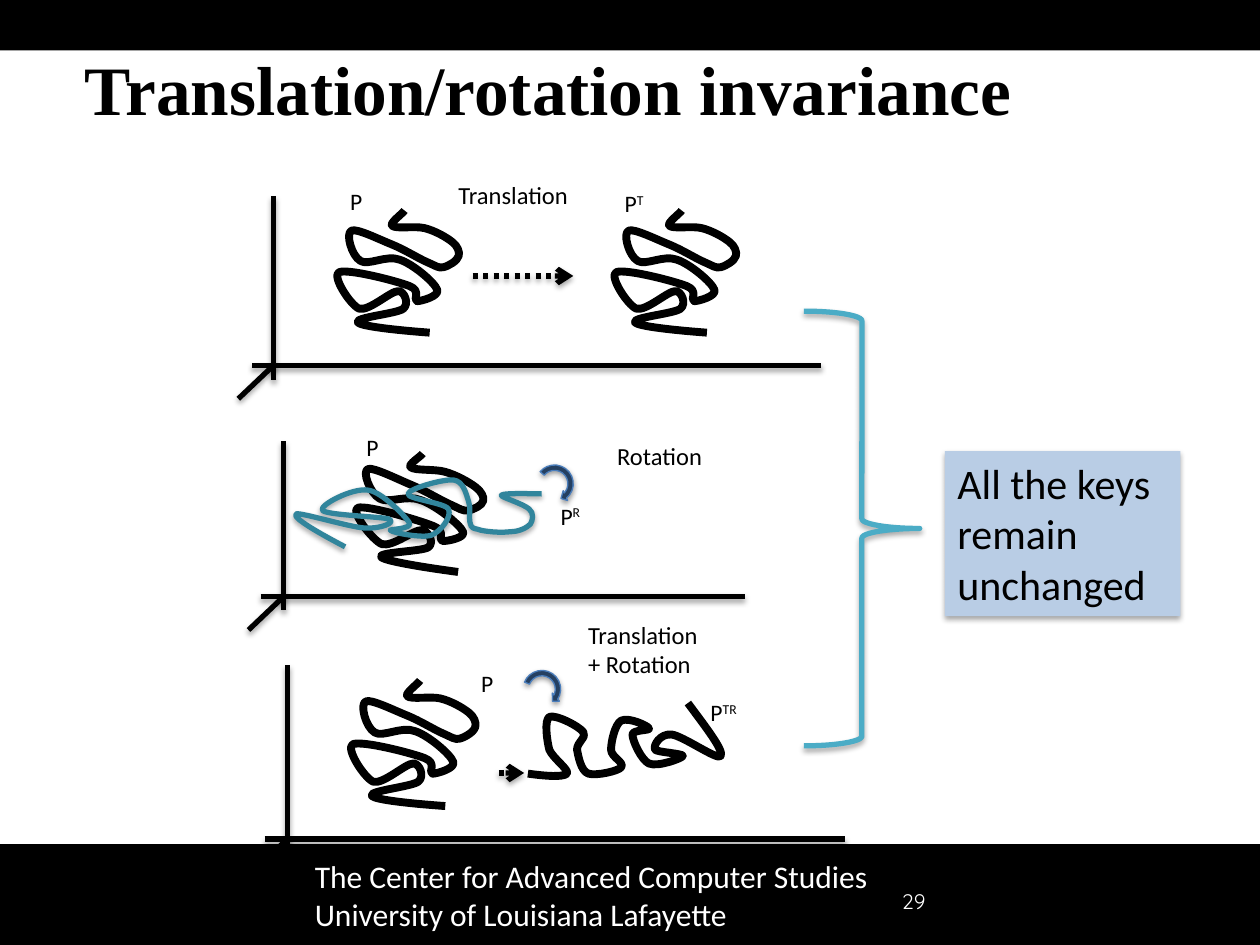
import math

from pptx import Presentation
from pptx.dml.color import RGBColor
from pptx.enum.dml import MSO_LINE
from pptx.enum.shapes import MSO_CONNECTOR, MSO_SHAPE
from pptx.enum.text import MSO_ANCHOR, PP_ALIGN
from pptx.oxml import parse_xml
from pptx.oxml.ns import nsdecls, qn
from pptx.util import Pt

STRAIGHT = MSO_CONNECTOR.STRAIGHT
RECT, BRACE, TURN = MSO_SHAPE.RECTANGLE, MSO_SHAPE.RIGHT_BRACE, MSO_SHAPE.CIRCULAR_ARROW
DOTTED = MSO_LINE.ROUND_DOT
MIDDLE, LEFT = MSO_ANCHOR.MIDDLE, PP_ALIGN.LEFT

BLACK = RGBColor(0x00, 0x00, 0x00)
WHITE = RGBColor(0xFF, 0xFF, 0xFF)
AQUA = RGBColor(0x4B, 0xAC, 0xC6)
TEAL = RGBColor(0x31, 0x85, 0x9C)
NAVY = RGBColor(0x25, 0x40, 0x61)
BLUE = RGBColor(0x4B, 0x7E, 0xBC)
PALE_BLUE = RGBColor(0xB9, 0xCD, 0xE5)

# Each chain: rotation, frame size, start point, then two controls and an end per curve.
PROTEIN = (207, 95, 97, [
    77, 96, 50, 94, 23, 91, 20, 88, 16, 84, 51, 81, 56, 77, 61, 73, 57, 63, 52, 63,
    46, 63, 29, 79, 21, 77, 14, 74, -1, 51, 5, 48, 12, 45, 51, 55, 61, 59,
    71, 63, 63, 70, 67, 71, 70, 71, 85, 67, 83, 62, 81, 56, 63, 41, 53, 38,
    43, 34, 28, 43, 22, 39, 15, 35, 10, 17, 15, 15, 19, 13, 37, 22, 47, 26,
    57, 30, 68, 37, 75, 40, 82, 43, 84, 45, 88, 44, 92, 43, 99, 39, 100, 35,
    101, 32, 99, 27, 95, 24, 90, 20, 81, 15, 73, 13, 65, 11, 50, 14, 47, 11,
    45, 9, 56, 1, 57, -1])
ROTATED = (266.3, 49, 198, [
    -33, 127, -54, 116, -75, 104, -72, 101, -70, 99, -31, 111, -18, 112,
    -6, 113, 8, 108, 2, 105, -3, 103, -48, 102, -51, 98, -54, 94, -27, 80, -15, 82,
    -4, 83, 15, 103, 18, 108, 21, 113, 0, 113, 3, 114, 6, 116, 27, 120, 35, 118,
    43, 115, 52, 103, 49, 97, 46, 92, 16, 89, 17, 85, 17, 81, 45, 73, 53, 74,
    61, 75, 63, 85, 65, 91, 67, 96, 65, 103, 66, 107, 67, 110, 66, 112, 72, 113,
    77, 115, 91, 116, 98, 115, 105, 115, 111, 112, 114, 109,
    116, 106, 117, 100, 113, 97, 109, 93, 89, 87, 91, 86, 93, 84, 118, 85, 123, 85])
MOVED_ROTATED = (90, 59, 156, [
    79, 48, 93, 67, 108, 86, 105, 90, 103, 94, 75, 74, 66, 73, 57, 72, 51, 82, 53, 85,
    54, 87, 75, 88, 75, 90, 74, 92, 55, 99, 48, 96, 42, 93, 35, 78, 35, 73,
    35, 69, 50, 70, 48, 68, 47, 66, 32, 59, 26, 62, 21, 65, 18, 79, 18, 85,
    18, 91, 29, 95, 26, 99, 24, 102, 6, 106, 0, 104, -6, 102, -8, 90, -9, 85,
    -9, 79, -1, 75, -4, 71, -8, 66, -26, 57, -31, 59, -35, 62, -33, 77, -31, 85,
    -28, 92, -15, 101, -17, 104, -20, 107, -34, 106, -48, 104])


def add_shadow(sp, alpha=35, dist=1.8):
    sp._element.spPr.append(parse_xml(
        f'<a:effectLst {nsdecls("a")}><a:outerShdw blurRad="{Pt(3.1)}" dist="{Pt(dist)}" '
        f'dir="5400000" rotWithShape="0"><a:srgbClr val="000000"><a:alpha val="{alpha}000"/>'
        '</a:srgbClr></a:outerShdw></a:effectLst>'))


def add_text(slide, box, text, size, color=BLACK, font="Calibri", sup=""):
    """Add a text box; sup is set as a superscript after the text."""
    sp = slide.shapes.add_textbox(*map(Pt, box))
    tf = sp.text_frame
    tf.word_wrap = True
    tf.text = text
    for p in tf.paragraphs:
        p.font.name, p.font.size, p.font.color.rgb = font, Pt(size), color
    if sup:
        r = tf.paragraphs[0].add_run()
        r.text = sup
        r._r.get_or_add_rPr().set("baseline", "30000")
    return sp


def add_line(slide, x1, y1, x2, y2, arrow=False):
    line = slide.shapes.add_connector(STRAIGHT, Pt(x1), Pt(y1), Pt(x2), Pt(y2))
    line.line.color.rgb, line.line.width = BLACK, Pt(3)
    if arrow:
        line.line.dash_style = DOTTED
        ln = line._element.spPr.find(qn("a:ln"))
        ln.append(ln.makeelement(qn("a:tailEnd"), {"type": "arrow"}))
    add_shadow(line)


def add_axes(slide, x, top, bottom, left, right, y):
    """Three axes that cross at (x, y)."""
    add_line(slide, x, top, x, bottom)
    add_line(slide, left, y, right, y)
    add_line(slide, x, y, x - 20, y + 19)


def add_chain(slide, chain, box, color=BLACK, width=4.5, shadow=False):
    """Fit a chain to the unrotated frame in box, then rotate it."""
    angle, w, h, numbers = chain
    x, y, box_w, box_h = box
    rot = complex(math.cos(math.radians(angle)), math.sin(math.radians(angle)))
    nodes = []
    for px, py in zip(numbers[::2], numbers[1::2]):
        z = complex(px - w / 2, py - h / 2) / rot
        nodes.append(complex(z.real * box_w / w, z.imag * box_h / h))
    xs, ys = [z.real for z in nodes[::3]], [z.imag for z in nodes[::3]]
    mid = complex(min(xs) + max(xs), min(ys) + max(ys)) / 2
    # The shape turns about the middle of its outline, so allow for that shift.
    origin = complex(x + box_w / 2, y + box_h / 2) + mid * rot - mid
    placed = [(Pt((z + origin).real), Pt((z + origin).imag)) for z in nodes]
    builder = slide.shapes.build_freeform(*placed[0])
    builder.add_line_segments(placed[3::3], close=False)
    sp = builder.convert_to_shape()
    # Turn each segment into a curve by adding its two control points.
    for i, segment in enumerate(list(sp._element.iter(qn("a:lnTo")))):
        segment.tag = qn("a:cubicBezTo")
        for j, (cx, cy) in enumerate(placed[3 * i + 1:3 * i + 3]):
            segment.insert(j, segment.makeelement(
                qn("a:pt"), {"x": str(cx - sp.left), "y": str(cy - sp.top)}))
    sp.rotation = angle
    sp.fill.background()
    sp.line.color.rgb, sp.line.width = color, Pt(width)
    if shadow:
        add_shadow(sp)
    else:
        sp.shadow.inherit = False


def add_turn_arrow(slide, x, y, angle):
    sp = slide.shapes.add_shape(TURN, Pt(x), Pt(y), Pt(24.5), Pt(24.5))
    for i, value in enumerate((0.125, 11.423, 204.577, 92.106, 0.125)):
        sp.adjustments[i] = value
    sp.rotation = angle
    sp.fill.solid()
    sp.fill.fore_color.rgb = NAVY
    sp.line.color.rgb, sp.line.width = BLUE, Pt(0.75)
    add_shadow(sp, 38, 1.6)


def add_frame(slide):
    """Black bars, title and footer."""
    for y, h in ((0, 28.8), (482.4, 57.6)):
        bar = slide.shapes.add_shape(RECT, 0, Pt(y), Pt(720), Pt(h))
        bar.shadow.inherit = False
        bar.fill.solid()
        bar.fill.fore_color.rgb = BLACK
        bar.line.fill.background()
    title = slide.shapes.title
    title.left, title.top, title.width, title.height = map(Pt, (41, 21.6, 620.6, 56.9))
    tf = title.text_frame
    tf.text = "Translation/rotation invariance"
    tf.vertical_anchor = MIDDLE
    p = tf.paragraphs[0]
    p.alignment = LEFT
    p.font.name, p.font.size, p.font.bold = "Times New Roman", Pt(39.6), True
    p.font.color.rgb = BLACK
    add_text(slide, (172.8, 486, 361.4, 54),
             "The Center for Advanced Computer Studies\nUniversity of Louisiana Lafayette",
             18, WHITE)
    number = add_text(slide, (508.3, 500.4, 162, 28.8), "29", 12, WHITE, "Quicksand")
    number.text_frame.vertical_anchor = MIDDLE


def add_translation(slide):
    add_axes(slide, 156.2, 112.3, 217.4, 144, 469.4, 208.9)
    for x in (190.1, 348.5):
        add_chain(slide, PROTEIN, (x, 121, 68.4, 69.8))
    add_line(slide, 270, 157.7, 327.6, 157.7, arrow=True)
    add_text(slide, (193, 103, 47.5, 31), "P", 13.5)
    add_text(slide, (349.9, 104.4, 71.3, 31), "P", 13.5, sup="T")
    add_text(slide, (254.9, 99.4, 84.2, 24.5), "Translation", 14)


def add_rotation(slide):
    add_chain(slide, PROTEIN, (199.4, 260.6, 74.9, 64.1))
    add_axes(slide, 162, 252, 348.5, 149, 425.5, 341)
    add_chain(slide, ROTATED, (221, 221, 35.3, 142.6), TEAL, 3, shadow=True)
    add_turn_arrow(slide, 304.6, 264.2, 66.4)
    add_text(slide, (202.3, 244.1, 51.8, 31), "P", 13.5)
    add_text(slide, (313.2, 283, 75.6, 31), "P", 13.5, sup="R")
    add_text(slide, (345.6, 248.4, 66.2, 24.5), "Rotation", 14)


def add_translation_rotation(slide):
    add_chain(slide, MOVED_ROTATED, (336.2, 367.2, 42.5, 112.3))
    add_chain(slide, PROTEIN, (198, 389.5, 69.8, 72))
    add_axes(slide, 164.2, 380.2, 488.2, 151.2, 483.1, 479.5)
    add_line(slide, 285.1, 441.7, 299.5, 441.7, arrow=True)
    add_turn_arrow(slide, 297.4, 381.6, 48.6)
    add_text(slide, (267.8, 378.7, 54, 31), "P", 13.5)
    add_text(slide, (398.9, 395.3, 75.6, 31), "P", 13.5, sup="TR")
    add_text(slide, (329, 350.6, 84.2, 41), "Translation + Rotation", 14)


def add_conclusion(slide):
    brace = slide.shapes.add_shape(BRACE, Pt(459.4), Pt(177.8), Pt(66.2), Pt(248.4))
    brace.fill.background()
    brace.line.color.rgb, brace.line.width = AQUA, Pt(3)
    add_shadow(brace)
    box = add_text(slide, (540, 257.8, 134.6, 94.3), "All the keys remain unchanged", 24)
    box.fill.solid()
    box.fill.fore_color.rgb = PALE_BLUE
    add_shadow(box)


def main():
    prs = Presentation()
    prs.slide_width, prs.slide_height = Pt(720), Pt(540)
    slide = prs.slides.add_slide(prs.slide_layouts[5])
    add_frame(slide)
    add_conclusion(slide)
    add_translation(slide)
    add_rotation(slide)
    add_translation_rotation(slide)
    prs.save("out.pptx")


if __name__ == "__main__":
    main()
